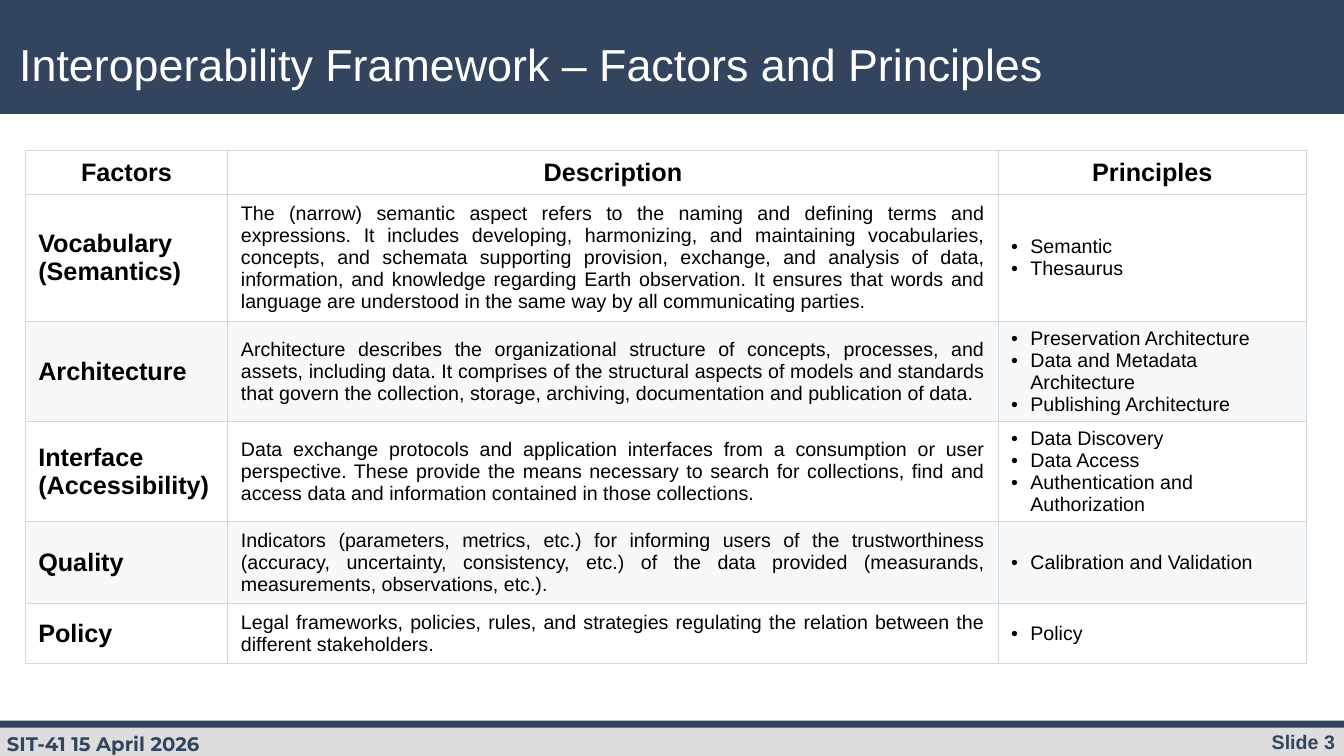
from lxml.etree import SubElement
from pptx import Presentation
from pptx.dml.color import RGBColor
from pptx.enum.shapes import MSO_SHAPE as Shape
from pptx.enum.text import MSO_ANCHOR as Anchor, MSO_AUTO_SIZE as AutoSize, PP_ALIGN as Align
from pptx.oxml.ns import qn
from pptx.util import Inches, Pt

NAVY = RGBColor(0x33, 0x44, 0x5F)
GRAY = RGBColor(0xDD, 0xDD, 0xDD)
WHITE = RGBColor(0xFF, 0xFF, 0xFF)
BLACK = RGBColor(0, 0, 0)
BAND = RGBColor(0xF6, 0xF8, 0xFA)
BORDER = RGBColor(0xD1, 0xD9, 0xE0)

COLUMN_WIDTHS = [2.01, 7.64, 3.06]
ROW_HEIGHTS = [0.44, 1.26, 0.87, 0.82, 0.81, 0.59]
HEADERS = ["Factors", "Description", "Principles"]
FACTORS = [
    ("Vocabulary (Semantics)",
     "The (narrow) semantic aspect refers to the naming and defining terms and expressions. "
     "It includes developing, harmonizing, and maintaining vocabularies, concepts, and schemata "
     "supporting provision, exchange, and analysis of data, information, and knowledge regarding "
     "Earth observation. It ensures that words and language are understood in the same way by "
     "all communicating parties.",
     ["Semantic", "Thesaurus"]),
    ("Architecture",
     "Architecture describes the organizational structure of concepts, processes, and assets, "
     "including data. It comprises of the structural aspects of models and standards that govern "
     "the collection, storage, archiving, documentation and publication of data.",
     ["Preservation Architecture", "Data and Metadata Architecture", "Publishing Architecture"]),
    ("Interface (Accessibility)",
     "Data exchange protocols and application interfaces from a consumption or user perspective. "
     "These provide the means necessary to search for collections, find and access data and "
     "information contained in those collections.",
     ["Data Discovery", "Data Access", "Authentication and Authorization"]),
    ("Quality",
     "Indicators (parameters, metrics, etc.) for informing users of the trustworthiness "
     "(accuracy, uncertainty, consistency, etc.) of the data provided (measurands, measurements, "
     "observations, etc.).",
     ["Calibration and Validation"]),
    ("Policy",
     "Legal frameworks, policies, rules, and strategies regulating the relation between the "
     "different stakeholders.",
     ["Policy"]),
]


class SlideBuilder:
    """Holds the style and the current slide, and adds each kind of element."""

    def __init__(self, prs, font="Arial"):
        self.slide = prs.slides.add_slide(prs.slide_layouts[5])
        self.shapes = self.slide.shapes
        self.font = font

    def add_text(self, p, text, size, color=BLACK, bold=False, align=Align.LEFT, font=None):
        p.alignment = align
        r = p.add_run()
        r.text = text
        r.font.name = font or self.font
        r.font.size = Pt(size)
        r.font.bold = bold
        r.font.color.rgb = color

    def bar(self, top, width, height, color):
        sp = self.shapes.add_shape(Shape.RECTANGLE, 0, Inches(top), Inches(width), Inches(height))
        sp.shadow.inherit = False
        sp.fill.solid()
        sp.fill.fore_color.rgb = color
        sp.line.fill.background()

    def label(self, left, top, width, height, text, align, font=None, spacing=None):
        box = self.shapes.add_textbox(Inches(left), Inches(top), Inches(width), Inches(height))
        tf = box.text_frame
        tf.word_wrap = True
        tf.auto_size = AutoSize.SHAPE_TO_FIT_TEXT
        p = tf.paragraphs[0]
        p.line_spacing = spacing
        self.add_text(p, text, 14, NAVY, True, align, font)

    def title(self, text):
        sp = self.shapes.title
        sp.left, sp.top = Inches(0.09), Inches(0.34)
        sp.width, sp.height = Inches(11.34), Inches(0.64)
        self.shapes._spTree.append(sp._element)
        tf = sp.text_frame
        tf.word_wrap = True
        tf.auto_size = AutoSize.NONE
        tf.vertical_anchor = Anchor.MIDDLE
        p = tf.paragraphs[0]
        p.line_spacing = 0.9
        self.add_text(p, text, 32, WHITE)

    def bullet(self, p):
        pPr = p._p.get_or_add_pPr()
        pPr.set("marL", str(Inches(0.19)))
        pPr.set("indent", str(-Inches(0.19)))
        SubElement(SubElement(pPr, qn("a:buClr")), qn("a:srgbClr"), val=str(BLACK))
        SubElement(pPr, qn("a:buFont"), typeface=self.font)
        SubElement(pPr, qn("a:buChar"), char="•")

    def style_cell(self, cell, color):
        cell.vertical_anchor = Anchor.MIDDLE
        cell.margin_left = cell.margin_right = Inches(0.13)
        cell.margin_top = cell.margin_bottom = Inches(0.06)
        tcPr = cell._tc.get_or_add_tcPr()
        for side in ("lnL", "lnR", "lnT", "lnB"):
            ln = SubElement(tcPr, qn(f"a:{side}"), w=str(Pt(0.75)))
            SubElement(SubElement(ln, qn("a:solidFill")), qn("a:srgbClr"), val=str(BORDER))
        cell.fill.solid()
        cell.fill.fore_color.rgb = color

    def factor_table(self, left, top):
        frame = self.shapes.add_table(
            len(ROW_HEIGHTS), len(COLUMN_WIDTHS), Inches(left), Inches(top),
            Inches(sum(COLUMN_WIDTHS)), Inches(sum(ROW_HEIGHTS)))
        table = frame.table
        table.first_row = table.horz_banding = False
        for column, width in zip(table.columns, COLUMN_WIDTHS):
            column.width = Inches(width)
        for i, (row, height) in enumerate(zip(table.rows, ROW_HEIGHTS)):
            row.height = Inches(height)
            for cell in row.cells:
                self.style_cell(cell, BAND if i and i % 2 == 0 else WHITE)
        for cell, text in zip(table.rows[0].cells, HEADERS):
            self.add_text(cell.text_frame.paragraphs[0], text, 18, bold=True, align=Align.CENTER)
        for i, (factor, description, principles) in enumerate(FACTORS, 1):
            name, detail, points = (cell.text_frame for cell in table.rows[i].cells)
            self.add_text(name.paragraphs[0], factor, 18, bold=True)
            self.add_text(detail.paragraphs[0], description, 14, align=Align.JUSTIFY)
            for n, principle in enumerate(principles):
                p = points.add_paragraph() if n else points.paragraphs[0]
                self.bullet(p)
                self.add_text(p, principle, 14)


def main():
    prs = Presentation()
    prs.slide_width, prs.slide_height = Inches(13.33), Inches(7.5)
    page = SlideBuilder(prs)
    page.bar(0, 13.33, 1.13, NAVY)
    page.bar(7.19, 13.33, 0.31, GRAY)
    page.bar(7.15, 13.33, 0.07, NAVY)
    page.label(11.23, 7.19, 2.11, 0.34, "Slide 3", Align.RIGHT)
    page.label(-0.03, 7.18, 5.39, 0.37, "SIT-41 15 April 2026", Align.LEFT, "Montserrat", 1.15)
    page.title("Interoperability Framework – Factors and Principles")
    page.factor_table(0.25, 1.49)
    prs.save("out.pptx")


if __name__ == "__main__":
    main()
